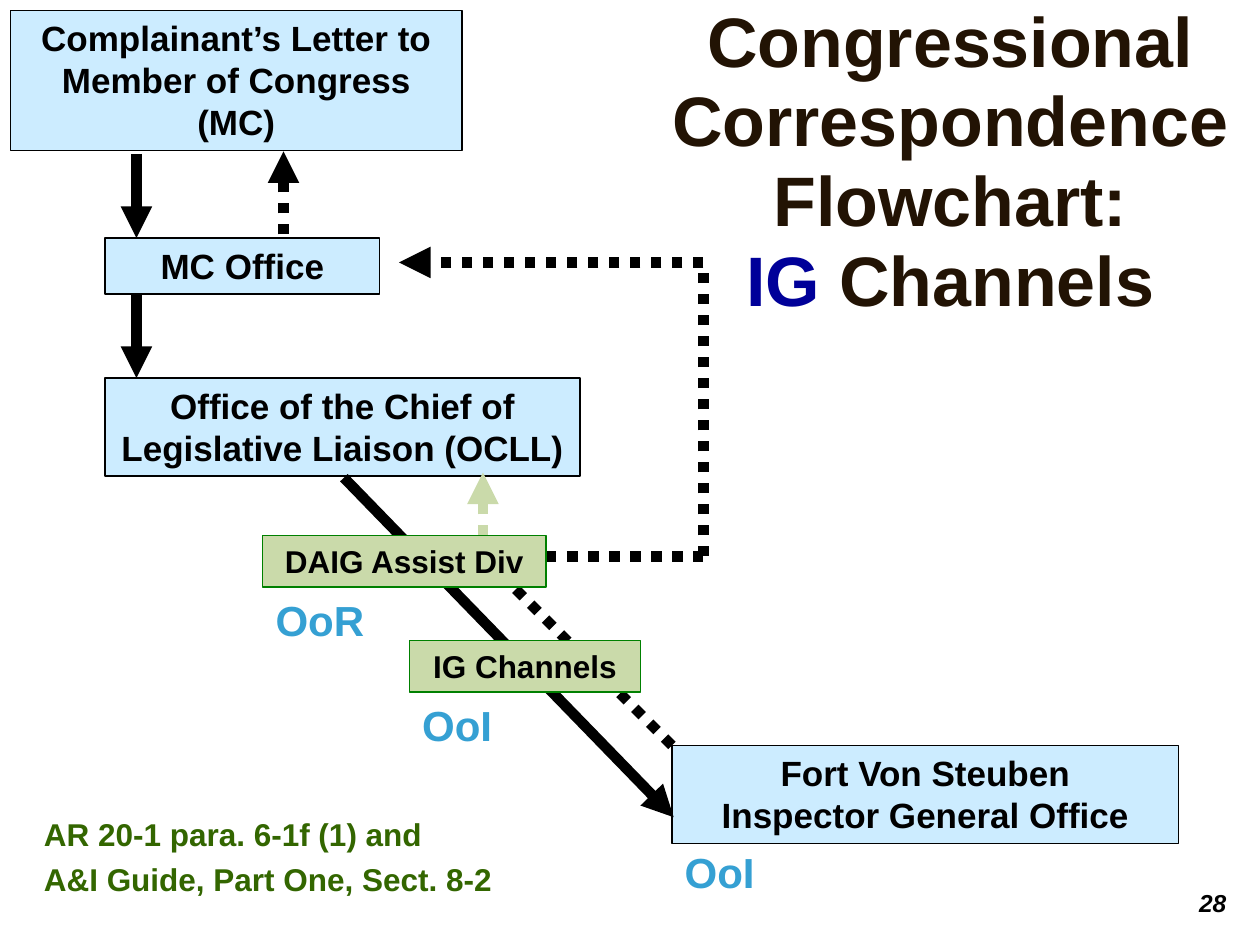
"""Build the Congressional correspondence flowchart slide."""
from pptx import Presentation
from pptx.dml.color import RGBColor
from pptx.enum.dml import MSO_LINE
from pptx.enum.shapes import MSO_CONNECTOR, MSO_SHAPE
from pptx.enum.text import MSO_ANCHOR, PP_ALIGN
from pptx.oxml.ns import qn
from pptx.util import Pt
from lxml.etree import SubElement

THEME = {
    "font": "Arial", "black": "000000", "title": "221304", "accent": "000099",
    "blue": "CCECFF", "sage": "CADAAA", "green": "008000",
    "note": "336600", "role": "35A0D3",
    "head": 40, "tag": 24, "big": 20, "mid": 18, "small": 14,
    "edge": 0.75, "thick": 6,
}
STYLES = {"blue": ("blue", "black", "big"), "sage": ("sage", "green", "mid")}

TITLE = [("Congressional Correspondence Flowchart:\v", "title"),
         ("IG", "accent"), (" Channels", "title")]
MAIN = [
    (["Complainant’s Letter to Member of Congress (MC)"], (6, 6, 258, 80)),
    (["MC Office"], (60, 136, 157, 32)),
    (["Office of the Chief of Legislative Liaison (OCLL)"], (60, 216, 271.5, 56)),
    (["Fort Von Steuben", "Inspector General Office"], (384, 426, 289.5, 56)),
]
STEPS = [
    (["DAIG Assist Div"], (150, 306, 162, 29.5)),
    (["IG Channels"], (234, 366, 132, 29.5)),
]
ROLES = [("OoR", (150, 336, 65.5, 36)), ("OoI", (234, 396, 54.5, 36)),
         ("OoI", (384, 480, 54.5, 36))]
NOTE = ["AR 20-1 para. 6-1f (1) and", "A&I Guide, Part One, Sect. 8-2"]
RETURN = [((384, 426), (294, 336), "black", True, False)]
FLOWS = [
    ((276, 318), (276, 270), "sage", True, True),
    ((162, 134), (162, 86.5), "black", True, True),
    ((78, 88), (78, 136), "black", False, True),
    ((78, 168), (78, 216), "black", False, True),
    ((196.5, 273), (385, 467), "black", False, True),
    ((312, 318), (402, 318), "black", True, False),
    ((402, 318), (402, 150), "black", True, False),
    ((402, 150), (228, 150), "black", True, True),
]


def tint(name):
    return RGBColor.from_string(THEME[name])


def write(frame, lines, size, color, align=PP_ALIGN.CENTER, gap=0, wrap=True):
    frame.word_wrap = wrap
    for i, line in enumerate(lines):
        para = frame.paragraphs[0] if i == 0 else frame.add_paragraph()
        para.text = line
        para.alignment = align
        if i and gap:
            para.space_before = Pt(gap)
        font = para.font
        font.name, font.size, font.bold = THEME["font"], Pt(THEME[size]), True
        font.color.rgb = tint(color)


def label(shapes, box, lines, size, color, **opts):
    frame = shapes.add_textbox(*map(Pt, box)).text_frame
    write(frame, lines, size, color, **opts)
    return frame


def block(shapes, lines, box, style):
    fill, edge, size = STYLES[style]
    shape = shapes.add_shape(MSO_SHAPE.RECTANGLE, *map(Pt, box))
    shape.shadow.inherit = False
    shape.fill.solid()
    shape.fill.fore_color.rgb = tint(fill)
    shape.line.color.rgb = tint(edge)
    shape.line.width = Pt(THEME["edge"])
    shape.text_frame.vertical_anchor = MSO_ANCHOR.TOP
    write(shape.text_frame, lines, size, "black")


def link(shapes, start, end, color, dotted, arrow):
    wire = shapes.add_connector(MSO_CONNECTOR.STRAIGHT, *map(Pt, start + end))
    wire.line.color.rgb = tint(color)
    wire.line.width = Pt(THEME["thick"])
    if dotted:
        wire.line.dash_style = MSO_LINE.ROUND_DOT
    props = wire._element.spPr
    if arrow:
        SubElement(props.find(qn("a:ln")), qn("a:tailEnd"), type="triangle")
    SubElement(props, qn("a:effectLst"))


def heading(shapes):
    frame = label(shapes, (366, 12, 354, 162), [""], "head", "title")
    frame.vertical_anchor = MSO_ANCHOR.MIDDLE
    para = frame.paragraphs[0]
    para.line_spacing = 0.95
    for text, color in TITLE:
        for i, part in enumerate(text.split("\v")):
            if i:
                para.add_line_break()
            if part:
                run = para.add_run()
                run.text = part
                run.font.color.rgb = tint(color)


def main():
    deck = Presentation()
    deck.slide_width, deck.slide_height = Pt(720), Pt(540)
    shapes = deck.slides.add_slide(deck.slide_layouts[6]).shapes
    for flow in RETURN:
        link(shapes, *flow)
    heading(shapes)
    for lines, box in MAIN:
        block(shapes, lines, box, "blue")
    for flow in FLOWS:
        link(shapes, *flow)
    for lines, box in STEPS:
        block(shapes, lines, box, "sage")
    for text, box in ROLES:
        label(shapes, box, [text], "tag", "role", wrap=False)
    label(shapes, (18, 462, 324, 55.5), NOTE, "mid", "note",
          align=PP_ALIGN.LEFT, gap=4.3)
    page = label(shapes, (678, 504, 30, 24), ["28"], "small", "black", wrap=False)
    page.paragraphs[0].font.italic = True
    deck.save("out.pptx")


if __name__ == "__main__":
    main()
